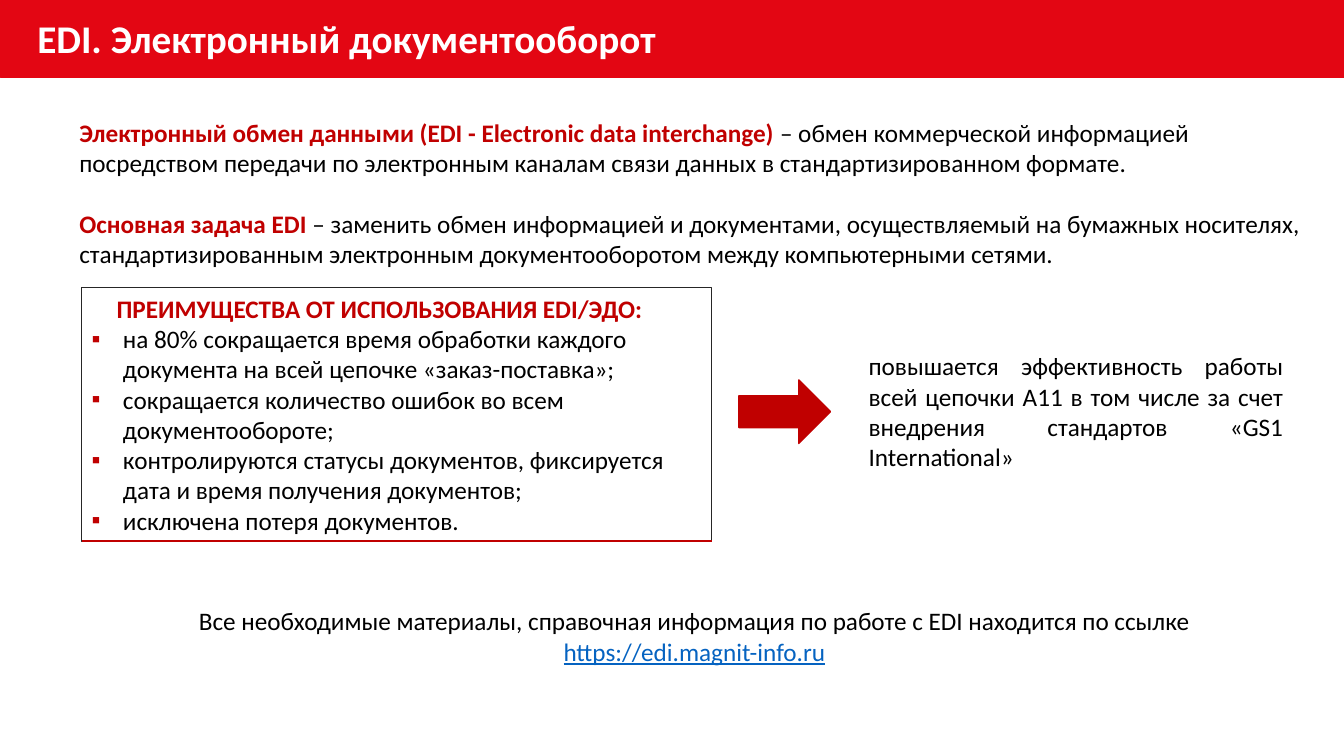
from lxml import etree
from pptx import Presentation
from pptx.dml.color import RGBColor
from pptx.enum.shapes import MSO_CONNECTOR as Connector, MSO_SHAPE as Preset
from pptx.enum.text import MSO_ANCHOR as Anchor, PP_ALIGN as Align
from pptx.oxml.ns import qn
from pptx.util import Cm, Pt

COLORS = {
    "header": "E30613",
    "accent": "C00000",
    "text": "000000",
    "white": "FFFFFF",
    "outline": "262626",
    "link": "0563C1",
}
FONT = "Calibri"
INDENT = Cm(0.63)
BULLET_INDENT = Cm(0.79)

DEFINITIONS = [
    ("Электронный обмен данными (EDI - Electronic data interchange) ",
     "– обмен коммерческой информацией посредством передачи по электронным "
     "каналам связи данных в стандартизированном формате."),
    ("Основная задача EDI ",
     "– заменить обмен информацией и документами, осуществляемый на бумажных "
     "носителях, стандартизированным электронным документооборотом между "
     "компьютерными сетями."),
]
BENEFITS = [
    "на 80% сокращается время обработки каждого документа на всей цепочке «заказ-поставка»;",
    "сокращается количество ошибок во всем документообороте;",
    "контролируются статусы документов, фиксируется дата и время получения документов;",
    "исключена потеря документов.",
]


def rgb(name):
    return RGBColor.from_string(COLORS[name])


def add_run(paragraph, text, size=18, color="text", bold=False, underline=False):
    run = paragraph.add_run()
    run.text = text
    font = run.font
    font.name, font.size = FONT, Pt(size)
    font.bold, font.underline = bold, underline
    font.color.rgb = rgb(color)


def add_paragraph(frame, align=Align.LEFT, left=0, hanging=0, before=0):
    """Use the empty first paragraph of a frame, or append a new one."""
    first = frame.paragraphs[0]
    paragraph = frame.add_paragraph() if first.runs else first
    paragraph.alignment = align
    paragraph.space_before = Pt(before)
    properties = paragraph._p.get_or_add_pPr()
    properties.set("marL", str(int(left)))
    properties.set("indent", str(-int(hanging)))
    return paragraph


def add_bullet(paragraph):
    properties = paragraph._p.get_or_add_pPr()
    bullet_color = etree.SubElement(properties, qn("a:buClr"))
    etree.SubElement(bullet_color, qn("a:srgbClr"), val=COLORS["accent"])
    etree.SubElement(properties, qn("a:buFont"), typeface="Arial")
    etree.SubElement(properties, qn("a:buChar"), char="▪")


def add_text_box(slide, box, wrap=True):
    frame = slide.shapes.add_textbox(*map(Cm, box)).text_frame
    frame.word_wrap = wrap
    return frame


def add_shape(slide, preset, box, fill, line, width):
    shape = slide.shapes.add_shape(preset, *map(Cm, box))
    shape.shadow.inherit = False
    shape.fill.solid()
    shape.fill.fore_color.rgb = rgb(fill)
    shape.line.color.rgb = rgb(line)
    shape.line.width = Pt(width)
    return shape


def add_header(slide, box):
    left, top, width, height = box
    add_shape(slide, Preset.RECTANGLE, box, "header", "header", 0.5)
    frame = add_text_box(slide, (left + 0.69, top + 0.23, 16.26, height - 0.5), wrap=False)
    add_run(add_paragraph(frame), "EDI. Электронный документооборот",
            size=28, color="white", bold=True)


def add_definitions(slide, box):
    frame = add_text_box(slide, box)
    for index, (term, meaning) in enumerate(DEFINITIONS):
        paragraph = add_paragraph(frame, before=22 if index else 0)
        add_run(paragraph, term, color="accent", bold=True)
        add_run(paragraph, meaning)


def add_benefits(slide, box):
    left, top, width, height = box
    panel = add_shape(slide, Preset.RECTANGLE, box, "white", "outline", 0.5)
    frame = panel.text_frame
    frame.word_wrap = True
    frame.vertical_anchor = Anchor.MIDDLE
    add_run(add_paragraph(frame, left=INDENT), "ПРЕИМУЩЕСТВА ОТ ИСПОЛЬЗОВАНИЯ EDI/ЭДО:",
            color="accent", bold=True)
    for benefit in BENEFITS:
        paragraph = add_paragraph(frame, left=BULLET_INDENT, hanging=BULLET_INDENT)
        add_bullet(paragraph)
        add_run(paragraph, benefit)

    # Red lower edge
    bottom = Cm(top + height)
    edge = slide.shapes.add_connector(
        Connector.STRAIGHT, Cm(left), bottom, Cm(left + width), bottom)
    edge.line.color.rgb = rgb("accent")
    edge.line.width = Pt(1.25)
    etree.SubElement(edge._element.spPr, qn("a:effectLst"))


def add_result(slide, box):
    left, top, width, height = box
    arrow_width, arrow_height = 2.31, 1.6
    arrow_top = top + (height - arrow_height) / 2
    add_shape(slide, Preset.RIGHT_ARROW, (left, arrow_top, arrow_width, arrow_height),
              "accent", "accent", 1)
    text_offset = 3.02
    frame = add_text_box(slide, (left + text_offset, top, width - text_offset, height))
    add_run(add_paragraph(frame, align=Align.JUSTIFY),
            "повышается эффективность работы всей цепочки A11 в том числе "
            "за счет внедрения стандартов «GS1 International»")


def add_footer(slide, box):
    frame = add_text_box(slide, box)
    add_run(add_paragraph(frame, align=Align.CENTER),
            "Все необходимые материалы, справочная информация по работе с EDI "
            "находится по ссылке")
    add_run(add_paragraph(frame, align=Align.CENTER), "https://edi.magnit-info.ru",
            color="link", underline=True)


def main():
    presentation = Presentation()
    presentation.slide_width, presentation.slide_height = Cm(33.87), Cm(19.05)
    slide = presentation.slides.add_slide(presentation.slide_layouts[6])
    add_header(slide, (0, 0, 33.87, 1.95))
    add_definitions(slide, (1.75, 2.83, 31.57, 4.2))
    add_benefits(slide, (2.06, 7.24, 15.88, 6.4))
    add_result(slide, (18.62, 8.71, 13.97, 3.33))
    add_footer(slide, (1.75, 15.14, 31.5, 1.8))
    presentation.save("out.pptx")


if __name__ == "__main__":
    main()
